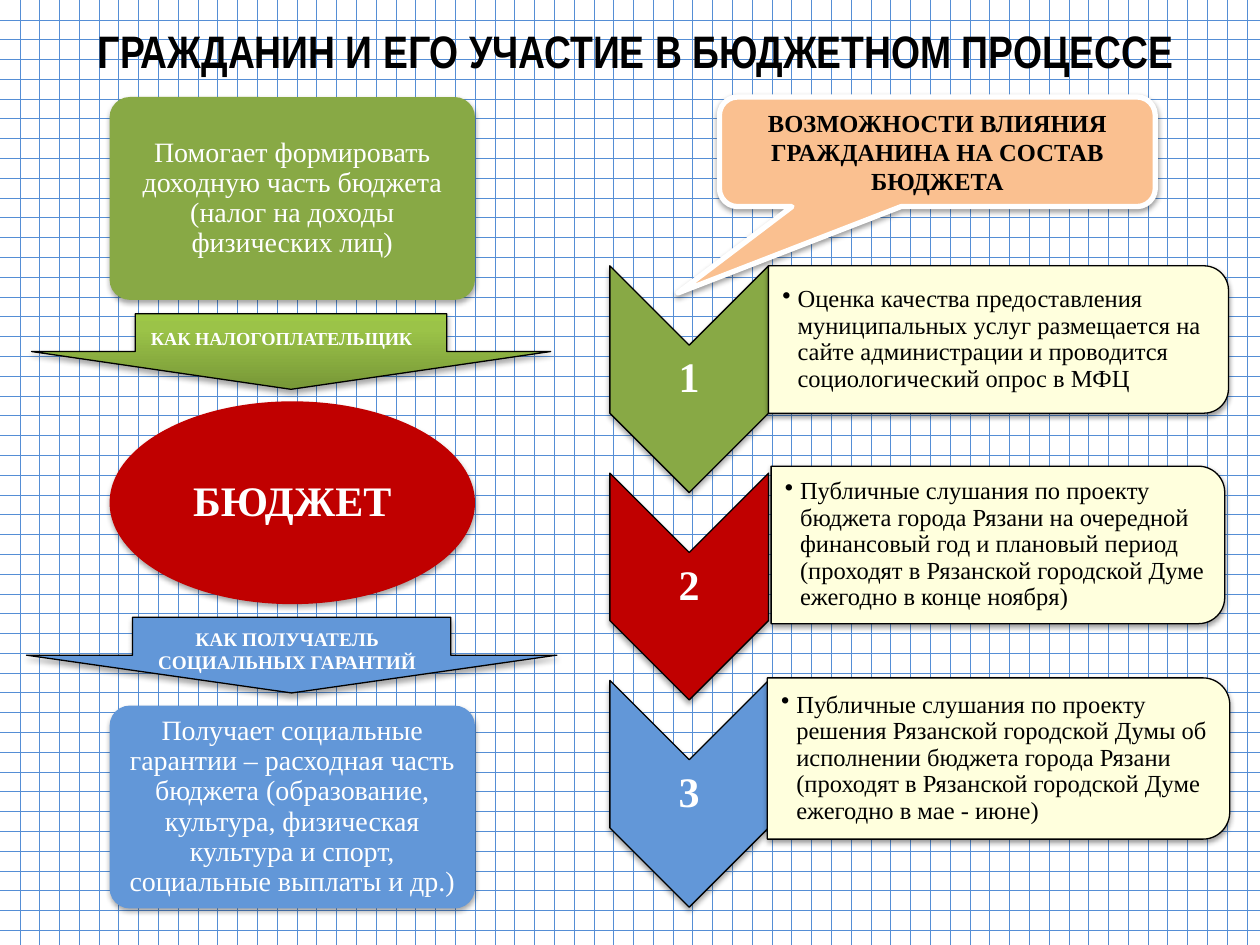
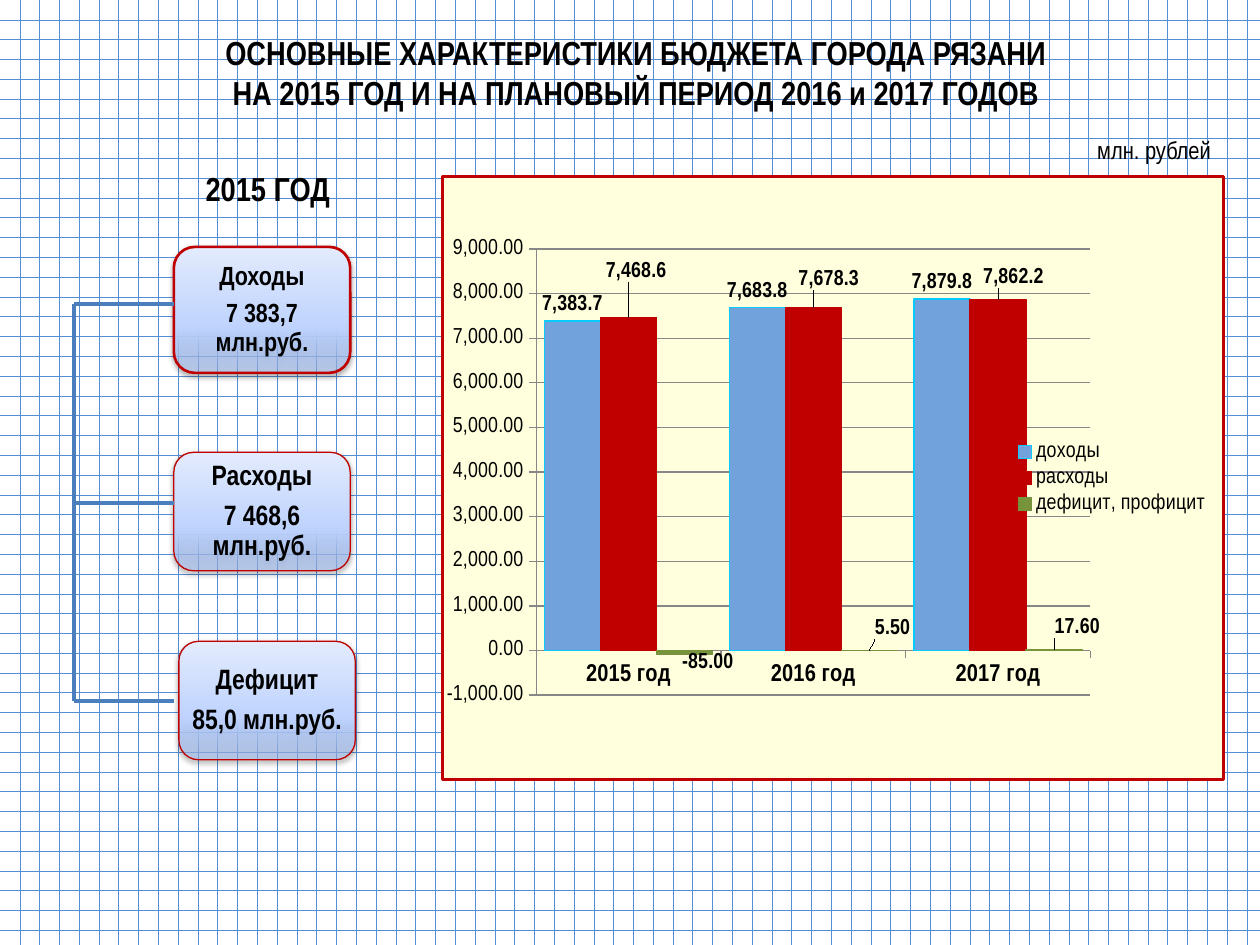
from dataclasses import dataclass
from typing import NamedTuple

from lxml import etree
from pptx import Presentation
from pptx.chart.data import CategoryChartData
from pptx.dml.color import RGBColor
from pptx.enum.chart import XL_CHART_TYPE as ChartType, XL_LABEL_POSITION as LabelPos
from pptx.enum.chart import XL_LEGEND_POSITION as LegendPos, XL_TICK_MARK as Tick
from pptx.enum.dml import MSO_PATTERN as Pattern
from pptx.enum.shapes import MSO_CONNECTOR as Connector, MSO_SHAPE as Shape
from pptx.enum.text import MSO_ANCHOR as Anchor, PP_ALIGN as Align
from pptx.oxml import parse_xml
from pptx.oxml.ns import nsdecls, qn
from pptx.util import Inches, Pt

SERIF, NARROW = "Times New Roman", "Arial Narrow"
BLACK, WHITE, GRID_BLUE = "000000", "FFFFFF", "558ED5"
GREEN, RED, BLUE, CREAM, PEACH = "88A945", "C00000", "6297D8", "FFFFDD", "FAC090"
LINK_BLUE, AXIS_GRAY = "4B7EBC", "878787"
ARROW_GREEN = ((0, "779737", 100), (80, "9BC348", 100), (100, "9DC746", 100))
PALE_BLUE = ((0, "A4C4FF", 50), (35, "BFD4FF", 100), (100, "E6EEFF", 100))


class Box(NamedTuple):
    left: float
    top: float
    width: float
    height: float

    def lengths(self) -> list:
        return [Inches(v) for v in self]

    def turned(self) -> "Box":
        shift = (self.width - self.height) / 2
        return Box(self.left + shift, self.top - shift, self.height, self.width)


@dataclass
class Style:
    size: float
    font: str = SERIF
    color: str = BLACK
    bold: bool = False
    align: Align = Align.CENTER
    anchor: Anchor = Anchor.MIDDLE
    spacing: float = 0.9
    after: float = 0
    inset_x: float = 0.02
    inset_y: float = 0.02
    bullet: bool = False


class Step(NamedTuple):
    number: str
    color: str
    panel: Box
    text: str


class Amount(NamedTuple):
    box: Box
    line_width: float
    size: float
    lines: tuple


class Measure(NamedTuple):
    name: str
    values: tuple
    fill: str
    line: str
    number_format: str
    label_shifts: tuple


STEPS = (
    Step("1", GREEN, Box(6.1, 2.11, 3.65, 1.17),
         "Оценка качества предоставления муниципальных услуг размещается на сайте "
         "администрации и проводится социологический опрос в МФЦ"),
    Step("2", RED, Box(6.12, 3.7, 3.6, 1.25),
         "Публичные слушания по проекту бюджета города Рязани на очередной финансовый "
         "год и плановый период (проходят в Рязанской городской Думе ежегодно в конце ноября)"),
    Step("3", BLUE, Box(6.09, 5.38, 3.67, 1.28),
         "Публичные слушания по проекту решения Рязанской городской Думы об исполнении "
         "бюджета города Рязани (проходят в Рязанской городской Думе ежегодно в мае - июне)"),
)
AMOUNTS = (
    Amount(Box(1.38, 1.96, 1.4, 1), 1.5, 15, ("Доходы", "7 383,7 млн.руб.")),
    Amount(Box(1.38, 3.59, 1.4, 0.94), 0.75, 16, ("Расходы", "7 468,6 млн.руб.")),
    Amount(Box(1.42, 5.09, 1.4, 0.94), 0.75, 16, ("Дефицит", "85,0 млн.руб.")),
)
MEASURES = (
    Measure("доходы", (7383.7, 7683.8, 7879.8), "72A2DC", "09CAFF", "#,##0.0",
            ((0, 0), (0, 0), (0, 0))),
    Measure("расходы", (7468.6, 7678.3, 7862.2), RED, RED, "#,##0.0",
            ((0.01, -0.05), (0.02, -0.02), (0.02, -0.01))),
    Measure("дефицит, профицит", (-85, 5.5, 17.6), "77933C", "77933C", "#,##0.00",
            ((0.03, -0.01), (0.03, -0.01), (0.03, -0.01))),
)


def rgb(value: str) -> RGBColor:
    return RGBColor.from_string(value)


def apply(target, values: dict) -> None:
    for name, value in values.items():
        setattr(target, name, value)


def set_font(font, style: Style) -> None:
    apply(font, {"name": style.font, "size": Pt(style.size), "bold": style.bold})
    font.color.rgb = rgb(style.color)


def write(s, lines: tuple, style: Style) -> None:
    tf = s.text_frame
    side, edge = Inches(style.inset_x), Inches(style.inset_y)
    apply(tf, {"word_wrap": True, "vertical_anchor": style.anchor, "margin_left": side,
               "margin_right": side, "margin_top": edge, "margin_bottom": edge})
    for i, line in enumerate(lines):
        p = tf.add_paragraph() if i else tf.paragraphs[0]
        apply(p, {"alignment": style.align, "line_spacing": style.spacing,
                  "space_after": Pt(style.after)})
        r = p.add_run()
        r.text = line
        set_font(r.font, style)
        if style.bullet:
            pPr = p._p.get_or_add_pPr()
            hang = Inches(0.12)
            pPr.set("marL", str(hang))
            pPr.set("indent", str(-hang))
            etree.SubElement(pPr, qn("a:buChar")).set("char", "•")


def add_text(slide, box: Box, style: Style, *lines: str) -> None:
    write(slide.shapes.add_textbox(*box.lengths()), lines, style)


def fill_gradient(s, stops: tuple) -> None:
    s.fill.gradient()
    s.fill.gradient_angle = 90
    stop_list = s._element.spPr.find(".//" + qn("a:gsLst"))
    for old in list(stop_list):
        stop_list.remove(old)
    for position, color, alpha in stops:
        stop_list.append(parse_xml(
            f'<a:gs {nsdecls("a")} pos="{position * 1000}"><a:srgbClr val="{color}">'
            f'<a:alpha val="{alpha * 1000}"/></a:srgbClr></a:gs>'))


def add_shadow(s, alpha: int, distance: float) -> None:
    s.shadow.inherit = False
    s._element.spPr.find(qn("a:effectLst")).append(parse_xml(
        f'<a:outerShdw {nsdecls("a")} blurRad="{Pt(3.1)}" dist="{Pt(distance)}" '
        f'dir="5400000" rotWithShape="0"><a:srgbClr val="{BLACK}">'
        f'<a:alpha val="{alpha * 1000}"/></a:srgbClr></a:outerShdw>'))


def add_block(slide, kind: Shape, box: Box, fill, line: str = "", width: float = 0.75,
              adjust: tuple = (), turn: bool = False, soft: bool = False):
    s = slide.shapes.add_shape(kind, *(box.turned() if turn else box).lengths())
    s.rotation = 90 if turn else 0
    for i, value in enumerate(adjust):
        s.adjustments[i] = value
    if isinstance(fill, str):
        s.fill.solid()
        s.fill.fore_color.rgb = rgb(fill)
    else:
        fill_gradient(s, fill)
    if line:
        s.line.color.rgb = rgb(line)
        s.line.width = Pt(width)
    else:
        s.line.fill.background()
    add_shadow(s, *((38, 1.6) if soft else (35, 1.8)))
    return s


def add_link(slide, x1: float, y1: float, x2: float, y2: float) -> None:
    c = slide.shapes.add_connector(Connector.STRAIGHT, *(Inches(v) for v in (x1, y1, x2, y2)))
    c.line.color.rgb = rgb(LINK_BLUE)
    c.line.width = Pt(2.25)
    etree.SubElement(c._element.spPr, qn("a:effectLst"))


def frame_xml(line: str, width: float, fill: str = ""):
    paint = f'<a:solidFill><a:srgbClr val="{fill}"/></a:solidFill>' if fill else "<a:noFill/>"
    return parse_xml(
        f'<c:spPr {nsdecls("c", "a")}>{paint}<a:ln w="{Pt(width)}"><a:solidFill>'
        f'<a:srgbClr val="{line}"/></a:solidFill></a:ln></c:spPr>')


def layout_xml(modes: str = "", **values: float):
    items = "".join(f'<c:{k} val="{v}"/>' for k, v in values.items())
    return parse_xml(f'<c:layout {nsdecls("c")}><c:manualLayout>{modes}{items}'
                     '</c:manualLayout></c:layout>')


def label_points(series, measure: Measure) -> None:
    for i, (x, y) in enumerate(measure.label_shifts):
        label = series.points[i].data_label
        set_font(label.font, Style(12.5, NARROW, bold=True))
        label.position = LabelPos.OUTSIDE_END
        idx = label._get_or_add_dLbl().find(qn("c:idx"))
        number = parse_xml(f'<c:numFmt {nsdecls("c")} formatCode="{measure.number_format}" '
                           'sourceLinked="0"/>')
        parts = [number, frame_xml(BLACK, 0.75)]
        if x or y:
            parts.insert(0, layout_xml(x=x, y=y))
        for part in reversed(parts):
            idx.addnext(part)


def add_budget_chart(slide) -> None:
    data = CategoryChartData()
    data.categories = ["2015 год", "2016 год", "2017 год"]
    for m in MEASURES:
        data.add_series(m.name, m.values)
    chart = slide.shapes.add_chart(ChartType.COLUMN_CLUSTERED,
                                   *Box(3.5, 1.39, 6.22, 4.81).lengths(), data).chart
    apply(chart, {"has_title": False, "has_legend": True})
    apply(chart.legend, {"position": LegendPos.RIGHT, "include_in_layout": False})
    set_font(chart.font, Style(12.5, NARROW))
    plot = chart.plots[0]
    apply(plot, {"gap_width": 30, "overlap": 0, "vary_by_categories": False})
    for series, m in zip(plot.series, MEASURES):
        series.invert_if_negative = False
        series.format.fill.solid()
        series.format.fill.fore_color.rgb = rgb(m.fill)
        series.format.line.color.rgb = rgb(m.line)
        series.format.line.width = Pt(0.75)
        label_points(series, m)
    values, years = chart.value_axis, chart.category_axis
    apply(values, {"minimum_scale": -1000, "maximum_scale": 9000, "major_unit": 1000,
                   "has_major_gridlines": True})
    apply(values.tick_labels, {"number_format": "#,##0.00", "number_format_is_linked": False})
    values.major_gridlines.format.line.color.rgb = rgb(AXIS_GRAY)
    for axis in (values, years):
        axis.major_tick_mark = Tick.OUTSIDE
        axis.format.line.color.rgb = rgb(AXIS_GRAY)
    set_font(years.tick_labels.font, Style(14, NARROW, bold=True))
    body = chart._chartSpace.find(qn("c:chart"))
    body.addnext(frame_xml(RED, 1.75, CREAM))
    area = body.find(qn("c:plotArea"))
    for old in area.findall(qn("c:layout")):
        area.remove(old)
    modes = '<c:layoutTarget val="inner"/><c:xMode val="edge"/><c:yMode val="edge"/>'
    area.insert(0, layout_xml(modes, x=0.12, y=0.12, w=0.71, h=0.74))


def caption(size: float, **changes) -> Style:
    base = {"anchor": Anchor.TOP, "spacing": 1, "inset_x": 0.1, "inset_y": 0.05}
    return Style(size, **{**base, **changes})


def add_page(prs, title_box: Box, size: float, *title: str):
    slide = prs.slides.add_slide(prs.slide_layouts[6])
    fill = slide.background.fill
    fill.patterned()
    fill.pattern = Pattern.DOTTED_GRID
    fill.fore_color.rgb = rgb(GRID_BLUE)
    fill.back_color.rgb = rgb(WHITE)
    add_text(slide, title_box, caption(size, font=NARROW, bold=True), *title)
    return slide


def build_citizen(prs) -> None:
    slide = add_page(prs, Box(0.55, 0.13, 9, 0.47), 26,
                     "ГРАЖДАНИН И ЕГО УЧАСТИЕ В БЮДЖЕТНОМ ПРОЦЕССЕ")
    number = Style(24, color=WHITE, bold=True)
    bullet = Style(14, align=Align.LEFT, inset_x=0.11, inset_y=0.01, bullet=True)
    for i, step in enumerate(STEPS):
        top = 2.11 + 1.645 * i
        add_block(slide, Shape.CHEVRON, Box(4.84, top, 1.26, 1.8), step.color, BLACK, turn=True)
        add_text(slide, Box(4.84, top + 0.63, 1.26, 0.54), number, step.number)
        x, y, w, h = step.panel
        add_block(slide, Shape.ROUND_2_SAME_RECTANGLE, step.panel, CREAM, BLACK,
                  turn=True, soft=True)
        add_text(slide, Box(x, y + 0.06, w + 0.04, h - 0.12), bullet, step.text)
    s = add_block(slide, Shape.ROUNDED_RECTANGULAR_CALLOUT, Box(5.71, 0.77, 3.46, 0.87), PEACH,
                  WHITE, 3, adjust=(-0.595, 1.288, 0.167), soft=True)
    write(s, ("ВОЗМОЖНОСТИ ВЛИЯНИЯ ГРАЖДАНИНА НА СОСТАВ БЮДЖЕТА",),
          caption(14, bold=True, anchor=Anchor.MIDDLE))

    role = Style(16, color=WHITE, inset_x=0.07, inset_y=0.07)
    chain = (
        (Shape.ROUNDED_RECTANGLE, GREEN, (0.1,), role,
         "Помогает формировать доходную часть бюджета (налог на доходы физических лиц)"),
        (Shape.OVAL, RED, (), number, "БЮДЖЕТ"),
        (Shape.ROUNDED_RECTANGLE, BLUE, (0.1,), role,
         "Получает социальные гарантии – расходная часть бюджета (образование, культура, "
         "физическая культура и спорт, социальные выплаты и др.)"),
    )
    for i, (kind, fill, adjust, style, text) in enumerate(chain):
        s = add_block(slide, kind, Box(0.87, 0.77 + 2.415 * i, 2.9, 1.61), fill, adjust=adjust)
        write(s, (text,), style)
    arrows = (
        (Box(0.25, 2.49, 4.12, 0.6), ARROW_GREEN, Box(1.1, 2.55, 2.44, 0.28),
         caption(10.5, color=WHITE, bold=True, align=Align.LEFT), "КАК НАЛОГОПЛАТЕЛЬЩИК"),
        (Box(0.21, 4.9, 4.21, 0.6), BLUE, Box(1.06, 4.93, 2.44, 0.47),
         caption(11, color=WHITE, bold=True), "КАК ПОЛУЧАТЕЛЬ СОЦИАЛЬНЫХ ГАРАНТИЙ"),
    )
    for box, fill, text_box, style, text in arrows:
        add_block(slide, Shape.DOWN_ARROW, box, fill, BLACK, adjust=(0.6, 0.5))
        add_text(slide, text_box, style, text)


def build_budget(prs) -> None:
    slide = add_page(prs, Box(0.2, 0.21, 9.69, 0.79), 19,
                     "ОСНОВНЫЕ ХАРАКТЕРИСТИКИ БЮДЖЕТА ГОРОДА РЯЗАНИ",
                     "НА 2015 ГОД И НА ПЛАНОВЫЙ ПЕРИОД 2016 и 2017 ГОДОВ")
    add_budget_chart(slide)
    add_text(slide, Box(8.61, 1.02, 1.26, 0.34),
             caption(14, font=NARROW, align=Align.LEFT), "млн. рублей")
    add_text(slide, Box(1.06, 1.29, 2.13, 0.42), caption(19, font=NARROW, bold=True), "2015 ГОД")
    for a in AMOUNTS:
        s = add_block(slide, Shape.ROUNDED_RECTANGLE, a.box, PALE_BLUE, RED, a.line_width,
                      soft=True)
        write(s, a.lines, Style(a.size, NARROW, bold=True, after=a.size * 0.35,
                                inset_x=0.01, inset_y=0.01))
    branches = (2.41, 3.99, 5.56)
    add_link(slide, 0.59, branches[0], 0.59, branches[-1])
    for y in branches:
        add_link(slide, 0.59, y, 1.38, y)


def main() -> None:
    prs = Presentation()
    apply(prs, {"slide_width": Inches(10), "slide_height": Inches(7.5)})
    build_citizen(prs)
    build_budget(prs)
    prs.save("out.pptx")


if __name__ == "__main__":
    main()
